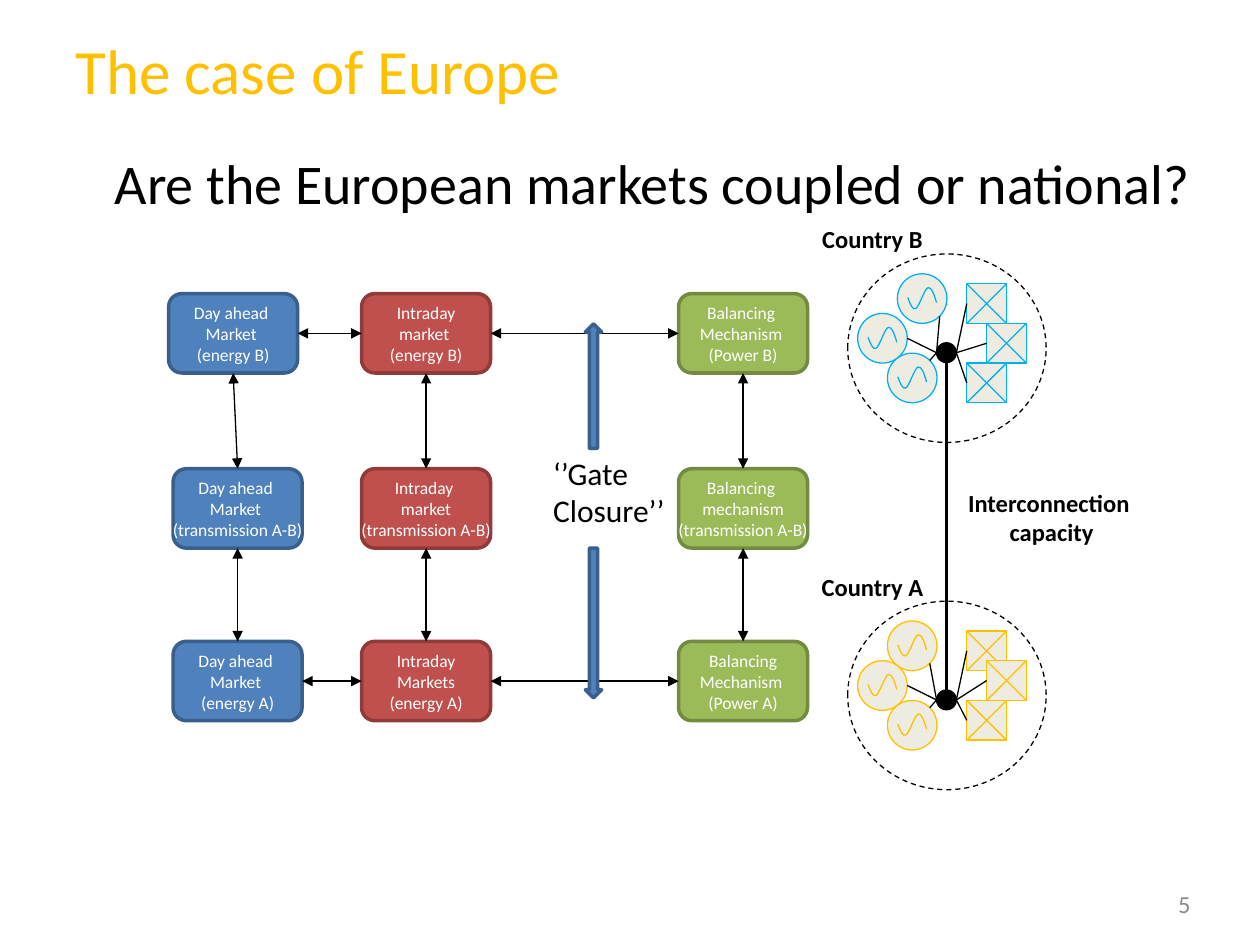
from dataclasses import dataclass
from itertools import pairwise
from math import cos, radians, sin

from lxml.etree import SubElement
from pptx import Presentation
from pptx.dml.color import RGBColor
from pptx.enum.dml import MSO_LINE
from pptx.enum.shapes import MSO_CONNECTOR, MSO_SHAPE as Preset
from pptx.enum.text import MSO_ANCHOR as Anchor, MSO_AUTO_SIZE, PP_ALIGN as Align
from pptx.oxml.ns import qn
from pptx.util import Cm, Pt

BLACK = RGBColor(0x00, 0x00, 0x00)
WHITE = RGBColor(0xFF, 0xFF, 0xFF)
GRAY = RGBColor(0x8C, 0x8C, 0x8C)
CREAM = RGBColor(0xEE, 0xEC, 0xE1)
GOLD = RGBColor(0xFF, 0xC0, 0x00)
SKY = RGBColor(0x00, 0xB0, 0xF0)
BLUE = RGBColor(0x4F, 0x81, 0xBD)
DARK_BLUE = RGBColor(0x3A, 0x5F, 0x8C)
RED = RGBColor(0xC0, 0x50, 0x4D)
DARK_RED = RGBColor(0x8E, 0x3B, 0x39)
GREEN = RGBColor(0x9B, 0xBB, 0x59)
DARK_GREEN = RGBColor(0x73, 0x8A, 0x42)

FONT = "Calibri"
ROW_TOPS = (5.92, 9.45, 12.93)
BOX_WIDTH, BOX_HEIGHT = 2.6, 1.6
GENERATOR, LOAD, HUB = 1.0, 0.8, 0.4
COUNTRY_LEFT = 17.09
HUB_OFFSET = 1.99
WIRE_ANGLES = (45, 0, -45)
WAVE = ((0.21, 0.48), (0.26, 0.61), (0.31, 0.74), (0.37, 0.7), (0.44, 0.67),
        (0.55, 0.29), (0.62, 0.28), (0.69, 0.26), (0.74, 0.41), (0.79, 0.58))


@dataclass
class Market:
    lefts: tuple[float, ...]
    fill: RGBColor
    edge: RGBColor
    labels: tuple[str, ...]


@dataclass
class Country:
    name: str
    top: float
    color: RGBColor
    generators: tuple[tuple[float, float], ...]
    loads: tuple[tuple[float, float], ...]


MARKETS = (
    Market((3.4, 3.49, 3.49), BLUE, DARK_BLUE,
           ("Day ahead \nMarket \n(energy B)",
            "Day ahead \nMarket \n(transmission A-B)",
            "Day ahead \nMarket \n(energy A)")),
    Market((7.29,) * 3, RED, DARK_RED,
           ("Intraday\nmarket \n(energy B)",
            "Intraday \nmarket\n(transmission A-B)",
            "Intraday\nMarkets\n(energy A)")),
    Market((13.68,) * 3, GREEN, DARK_GREEN,
           ("Balancing \nMechanism \n(Power B)",
            "Balancing \nmechanism\n(transmission A-B)",
            "Balancing\nMechanism \n(Power A)")),
)
COUNTRIES = (
    Country("Country B", 5.12, SKY,
            ((1.0, 0.4), (0.2, 1.2), (0.8, 2.0)),
            ((2.4, 0.6), (2.8, 1.4), (2.4, 2.2))),
    Country("Country A", 12.12, GOLD,
            ((0.8, 0.4), (0.2, 1.2), (0.8, 2.0)),
            ((2.4, 0.6), (2.8, 1.2), (2.4, 2.0))),
)


def write(shape, text: str, size: float, color: RGBColor, align=Align.CENTER,
          anchor=Anchor.MIDDLE, bold: bool = False, wrap: bool = False) -> None:
    frame = shape.text_frame
    frame.text = text
    frame.word_wrap = wrap
    frame.vertical_anchor = anchor
    for para in frame.paragraphs:
        para.alignment = align
        para.font.name = FONT
        para.font.size = Pt(size)
        para.font.bold = bold
        para.font.color.rgb = color


def add_text(page, left: float, top: float, width: float, height: float,
             text: str, size: float, color: RGBColor, **style):
    box = page.shapes.add_textbox(Cm(left), Cm(top), Cm(width), Cm(height))
    write(box, text, size, color, **style)
    return box


def add_preset(parent, preset, left: float, top: float, width: float, height: float,
               fill: RGBColor | None, edge: RGBColor, weight: float = 0.75):
    shape = parent.shapes.add_shape(preset, Cm(left), Cm(top), Cm(width), Cm(height))
    shape.shadow.inherit = False
    if fill is None:
        shape.fill.background()
    else:
        shape.fill.solid()
        shape.fill.fore_color.rgb = fill
    shape.line.color.rgb = edge
    shape.line.width = Pt(weight)
    return shape


def add_line(parent, start: tuple[float, float] = (0, 0), end: tuple[float, float] = (0, 0),
             color: RGBColor = BLACK, weight: float = 0.75):
    line = parent.shapes.add_connector(
        MSO_CONNECTOR.STRAIGHT, *(Cm(value) for value in (*start, *end)))
    line.line.color.rgb = color
    line.line.width = Pt(weight)
    SubElement(line._element.spPr, qn("a:effectLst"))
    return line


def link(page, first, first_side: int, second, second_side: int) -> None:
    line = add_line(page)
    line.begin_connect(first, first_side)
    line.end_connect(second, second_side)
    outline = line.line._get_or_add_ln()
    for end in ("a:headEnd", "a:tailEnd"):
        SubElement(outline, qn(end), type="triangle")


def curve_segments(shape) -> None:
    segments = list(shape._element.iter(qn("a:lnTo")))
    outline = segments[0].getparent()
    for first in range(0, len(segments), 3):
        curve = SubElement(outline, qn("a:cubicBezTo"))
        for segment in segments[first:first + 3]:
            curve.append(segment[0])
            outline.remove(segment)


def add_generator(page, left: float, top: float, color: RGBColor) -> None:
    group = page.shapes.add_group_shape()
    add_preset(group, Preset.OVAL, left, top, GENERATOR, GENERATOR, CREAM, color)
    start, *rest = [(Cm(left + x), Cm(top + y)) for x, y in WAVE]
    builder = group.shapes.build_freeform(*start)
    builder.add_line_segments(rest, close=False)
    wave = builder.convert_to_shape()
    curve_segments(wave)
    wave.shadow.inherit = False
    wave.fill.background()
    wave.line.color.rgb = color
    wave.line.width = Pt(0.75)


def add_load(page, left: float, top: float, color: RGBColor):
    group = page.shapes.add_group_shape()
    square = add_preset(group, Preset.RECTANGLE, left, top, LOAD, LOAD, CREAM, color)
    right, bottom = left + LOAD, top + LOAD
    add_line(group, (left, top), (right, bottom), color)
    add_line(group, (left, bottom), (right, top), color)
    return square


def add_country(page, country: Country) -> None:
    hub_x, hub_y = COUNTRY_LEFT + HUB_OFFSET, country.top + HUB_OFFSET
    radius = GENERATOR / 2
    for (x, y), angle in zip(country.generators, WIRE_ANGLES):
        left, top = COUNTRY_LEFT + x, country.top + y
        add_generator(page, left, top, country.color)
        rim = (left + radius * (1 + cos(radians(angle))),
               top + radius * (1 + sin(radians(angle))))
        add_line(page, rim, (hub_x - HUB / 2, hub_y))
    for x, y in country.loads:
        square = add_load(page, COUNTRY_LEFT + x, country.top + y, country.color)
        wire = add_line(page, end=(hub_x + HUB / 2, hub_y))
        wire.begin_connect(square, 1)
    add_preset(page, Preset.OVAL, hub_x - HUB / 2, hub_y - HUB / 2, HUB, HUB, BLACK, BLACK)
    border = add_preset(page, Preset.OVAL, COUNTRY_LEFT, country.top, 4, 3.8, None, BLACK)
    border.line.dash_style = MSO_LINE.DASH
    add_text(page, 16.19, country.top - 0.8, 2.8, 1, country.name, 14, BLACK, bold=True)


def add_market(page, market: Market) -> list:
    boxes = []
    for left, top, label in zip(market.lefts, ROW_TOPS, market.labels):
        box = add_preset(page, Preset.FLOWCHART_ALTERNATE_PROCESS, left, top,
                         BOX_WIDTH, BOX_HEIGHT, market.fill, market.edge, 2)
        write(box, label, 10, WHITE)
        boxes.append(box)
    for upper, lower in pairwise(boxes):
        link(page, upper, 2, lower, 0)
    return boxes


def main() -> None:
    deck = Presentation()
    deck.slide_width, deck.slide_height = Cm(25.4), Cm(19.05)
    page = deck.slides.add_slide(deck.slide_layouts[6])

    title = add_text(page, 1.27, 0.74, 22.83, 3, "The case of Europe", 36, GOLD,
                     align=Align.LEFT, anchor=Anchor.TOP, wrap=True)
    title.text_frame.paragraphs[0].line_spacing = Pt(37)
    add_text(page, 1.45, 2.87, 23.42, 12.57, "Are the European markets coupled or national?",
             32, BLACK, anchor=Anchor.TOP, wrap=True)
    add_text(page, 23.5, 17.7, 1.6, 1.02, "5", 14, GRAY, align=Align.LEFT, wrap=True)

    columns = [add_market(page, market) for market in MARKETS]
    for before, after in pairwise(columns):
        for row in (0, 2):
            link(page, before[row], 3, after[row], 1)

    gate = add_text(page, 10.9, 9.02, 2.77, 1.8, "‘’Gate\nClosure’’", 18, BLACK,
                    align=Align.LEFT, anchor=Anchor.TOP)
    gate.text_frame.auto_size = MSO_AUTO_SIZE.SHAPE_TO_FIT_TEXT
    add_preset(page, Preset.UP_ARROW, 11.8, 6.53, 0.33, 2.51, BLUE, DARK_BLUE, 2)
    add_preset(page, Preset.DOWN_ARROW, 11.8, 11.05, 0.33, 3.02, BLUE, DARK_BLUE, 2)

    for country in COUNTRIES:
        add_country(page, country)
    hub_x = COUNTRY_LEFT + HUB_OFFSET
    upper, lower = (country.top + HUB_OFFSET for country in COUNTRIES)
    add_line(page, (hub_x, upper + HUB / 2), (hub_x, lower - HUB / 2), weight=2)
    add_text(page, 18.9, 9.93, 4.6, 1, "Interconnection \ncapacity", 14, BLACK, bold=True)

    deck.save("out.pptx")


if __name__ == "__main__":
    main()
